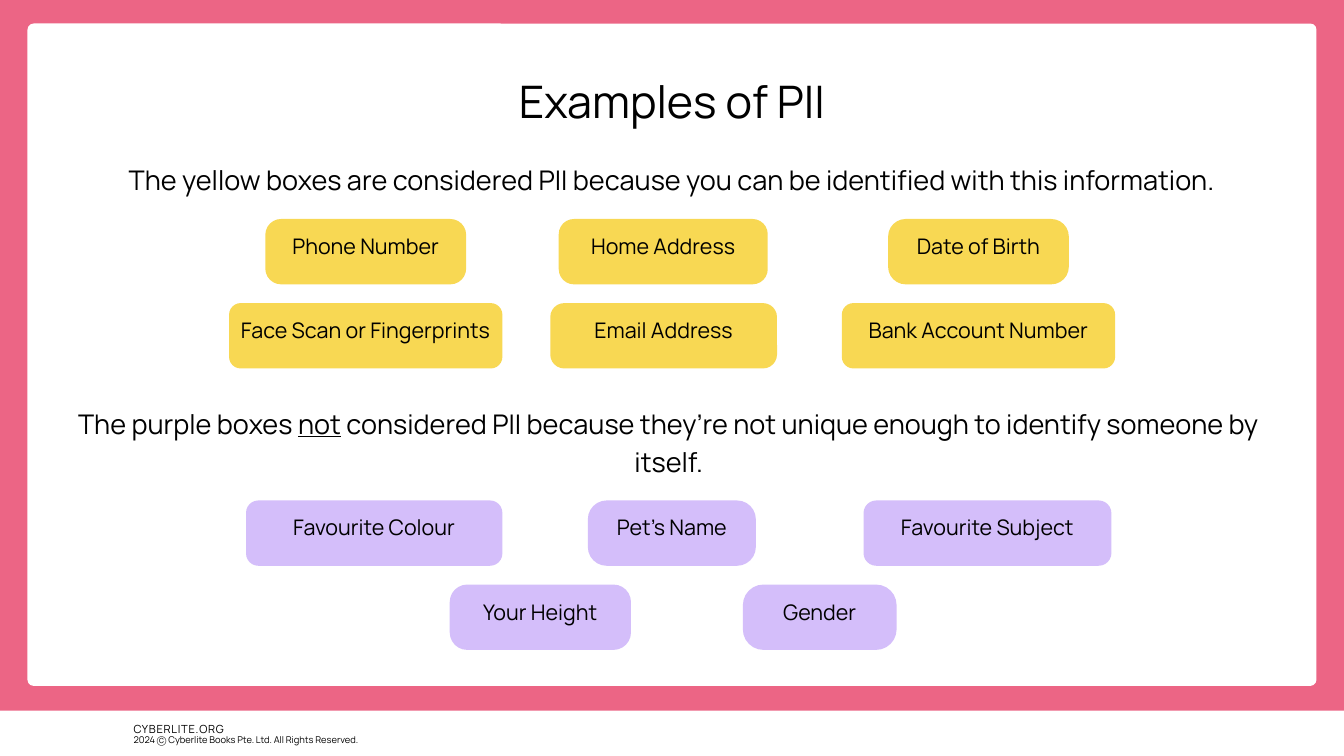
from pptx import Presentation
from pptx.dml.color import RGBColor
from pptx.enum.shapes import MSO_SHAPE as Shape
from pptx.enum.text import MSO_ANCHOR as Anchor, PP_ALIGN as Align
from pptx.util import Cm, Pt

# Content: a span is (text, underlined)
TITLE = "Examples of PII"
YELLOW_NOTE = [("The yellow boxes are considered PII because you can be "
                "identified with this information.", False)]
PURPLE_NOTE = [("The purple boxes ", False), ("not", True),
               (" considered PII because they’re not unique enough to "
                "identify someone by itself.", False)]
SITE = "CYBERLITE.ORG"
RIGHTS = "2024 Ⓒ Cyberlite Books Pte. Ltd. All Rights Reserved."

# Groups of rows; a box is (label, left, width) in cm
GROUPS = [
    ("yellow", 8.28, [
        [("Phone Number", 10.03, 7.59), ("Home Address", 21.12, 7.9),
         ("Date of Birth", 33.57, 6.83)],
        [("Face Scan or Fingerprints", 8.66, 10.33), ("Email Address", 20.8, 8.57),
         ("Bank Account Number", 31.82, 10.33)],
    ]),
    ("purple", 18.92, [
        [("Favourite Colour", 9.3, 9.69), ("Pet’s Name", 22.22, 6.35),
         ("Favourite Subject", 32.64, 9.37)],
        [("Your Height", 17, 6.85), ("Gender", 28.08, 5.81)],
    ]),
]

THEME = {
    "font": "Manrope",
    "colors": {"pink": "EC6585", "white": "FFFFFF", "black": "000000",
               "yellow": "F8D853", "purple": "D4BEFA"},
    "sizes": {"title": 48, "note": 29, "label": 23, "site": 12, "rights": 10},
}
LINE_FACTOR = 1.4
PAGE_W, PAGE_H = 50.8, 28.58
ROW_PITCH, BOX_H = 3.18, 2.47
CORNER_AREA = 4.52  # corner radius times box width, in square cm
LABEL_LIFT = 0.6


def color(name):
    return RGBColor.from_string(THEME["colors"][name])


def write(shape, spans, role, align=Align.CENTER, anchor=Anchor.TOP, bottom=0):
    frame = shape.text_frame
    frame.word_wrap = True
    frame.vertical_anchor = anchor
    frame.margin_left = frame.margin_right = frame.margin_top = 0
    frame.margin_bottom = Cm(bottom)
    size = THEME["sizes"][role]
    para = frame.paragraphs[0]
    para.alignment = align
    para.line_spacing = Pt(round(size * LINE_FACTOR, 1))
    for text, underlined in spans:
        span = para.add_run()
        span.text = text
        span.font.name = THEME["font"]
        span.font.size = Pt(size)
        span.font.bold = False
        span.font.color.rgb = color("black")
        if underlined:
            span.font.underline = True
    return para


def add_panel(page, kind, fill, left, top, width, height, radius=0):
    panel = page.shapes.add_shape(kind, Cm(left), Cm(top), Cm(width), Cm(height))
    panel.shadow.inherit = False
    panel.fill.solid()
    panel.fill.fore_color.rgb = color(fill)
    panel.line.fill.background()
    if radius:
        panel.adjustments[0] = radius / min(width, height)
    return panel


def add_text(page, spans, role, left, top, width, height, align=Align.CENTER):
    box = page.shapes.add_textbox(Cm(left), Cm(top), Cm(width), Cm(height))
    return write(box, spans, role, align)


def main():
    deck = Presentation()
    deck.slide_width, deck.slide_height = Cm(PAGE_W), Cm(PAGE_H)
    page = deck.slides.add_slide(deck.slide_layouts[5])
    page.background.fill.solid()
    page.background.fill.fore_color.rgb = color("pink")

    # Footer band
    add_panel(page, Shape.RECTANGLE, "white", 0, 26.87, PAGE_W, PAGE_H - 26.87)
    site = add_text(page, [(SITE, False)], "site", 5.05, 27.23, 4.7, 0.58, Align.LEFT)
    site.runs[0].font._element.set("spc", "80")
    add_text(page, [(RIGHTS, False)], "rights", 5.05, 27.69, 11.76, 0.48, Align.LEFT)

    # White card, with the title brought in front of it
    add_panel(page, Shape.ROUNDED_RECTANGLE, "white", 1.04, 0.89, 48.72, 25.04, 0.23)
    title = page.shapes.title
    title.left, title.top, title.width, title.height = Cm(5.18), Cm(2.46), Cm(40.44), Cm(2.41)
    write(title, [(TITLE, False)], "title")
    title.element.getparent().append(title.element)

    # Explanations
    add_text(page, YELLOW_NOTE, "note", 2.97, 5.99, 44.88, 1.45)
    add_text(page, PURPLE_NOTE, "note", 2.84, 15.19, 44.88, 2.87)

    # Labelled boxes
    for fill, first_top, rows in GROUPS:
        for index, row in enumerate(rows):
            top = first_top + index * ROW_PITCH
            for label, left, width in row:
                box = add_panel(page, Shape.ROUNDED_RECTANGLE, fill, left, top,
                                width, BOX_H, CORNER_AREA / width)
                write(box, [(label, False)], "label", anchor=Anchor.MIDDLE,
                      bottom=LABEL_LIFT)

    deck.save("out.pptx")


if __name__ == "__main__":
    main()
